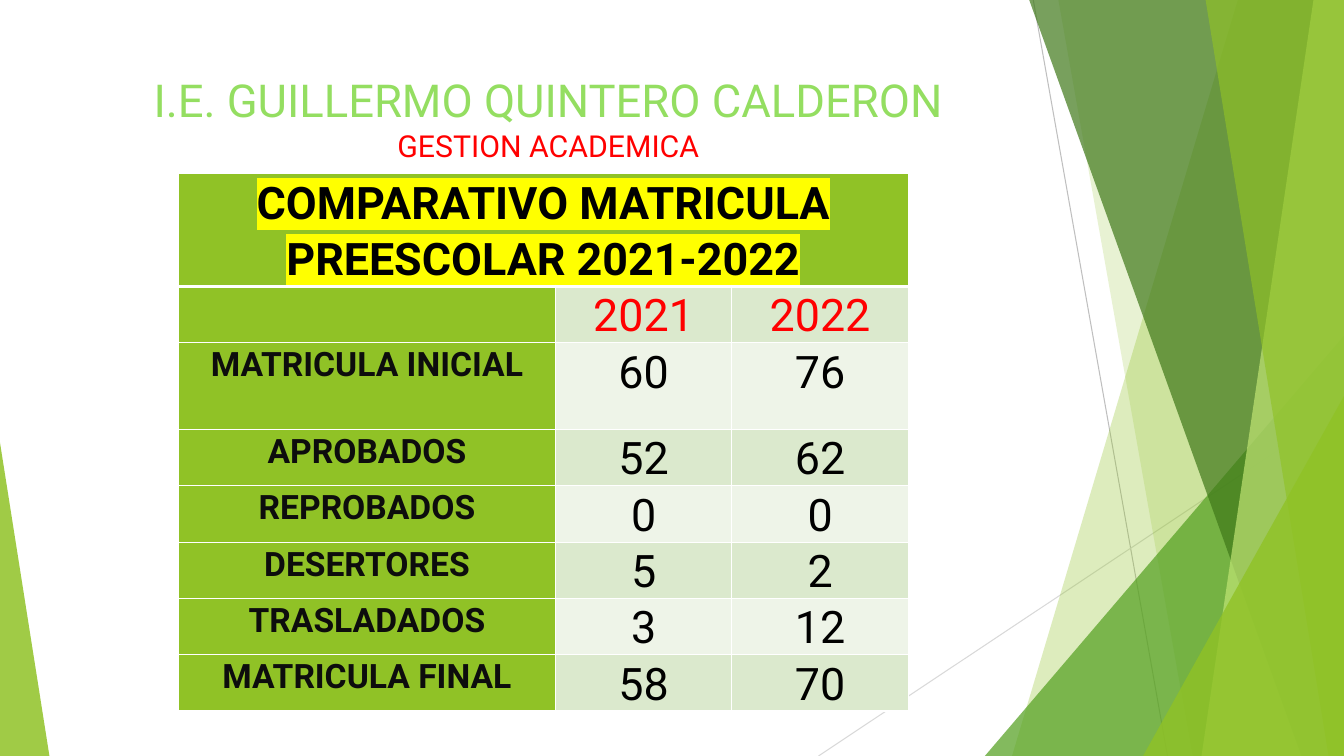
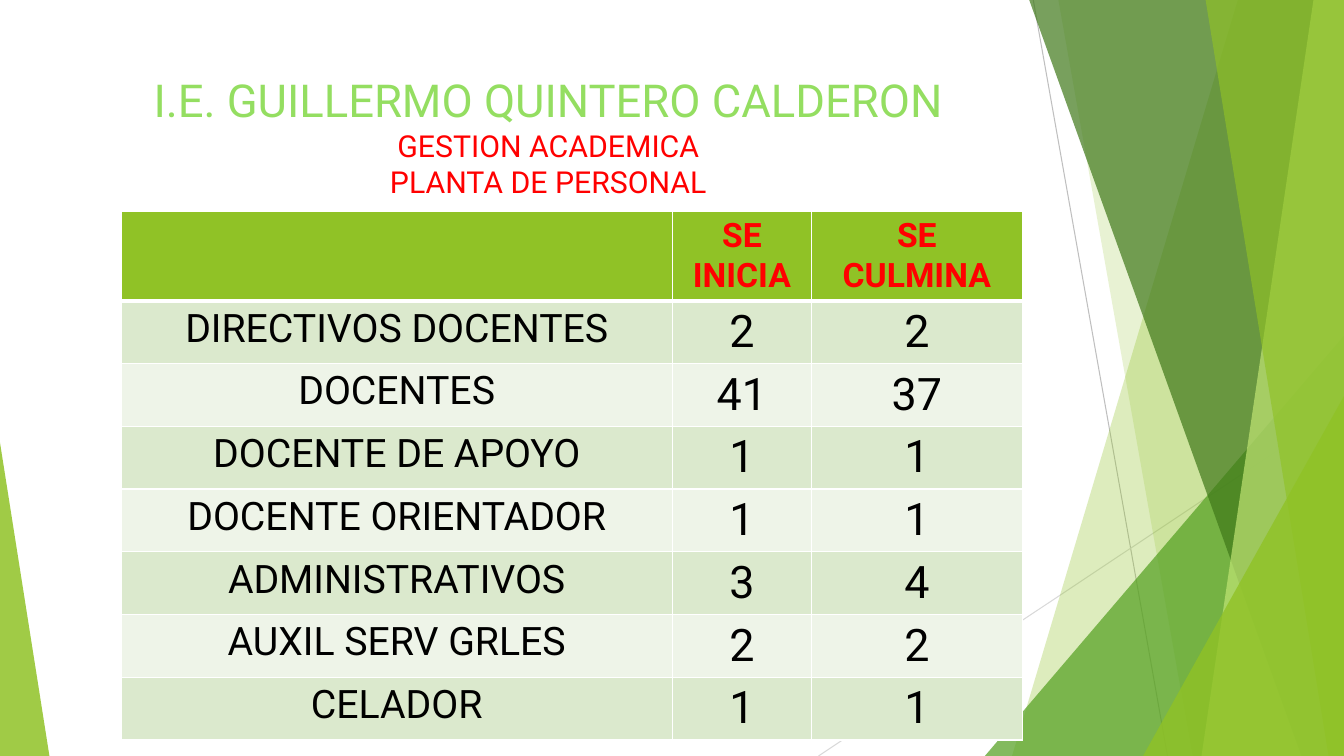
from dataclasses import dataclass

from lxml import etree
from pptx import Presentation
from pptx import util as u
from pptx.dml.color import RGBColor
from pptx.enum import shapes, text
from pptx.oxml.ns import qn


@dataclass(frozen=True)
class Theme:
    """Colours, font and type sizes."""
    font: str = "Roboto"
    green: str = "90C226"
    leaf: str = "54A021"
    dark: str = "3F7819"
    lime: str = "C0E474"
    head: str = "94DE61"
    red: str = "FF0000"
    black: str = "000000"
    ink: str = "0D0D0D"
    white: str = "FFFFFF"
    mark: str = "FFFF00"
    bands: tuple = ("DBE9CD", "EEF4E8")
    grays: tuple = ("BFBFBF", "D9D9D9")
    title: float = 32.4
    sub: float = 21.6
    big: int = 32
    mid: int = 28
    small: int = 24


@dataclass(frozen=True)
class Style:
    """Look of one run of text."""
    size: float
    color: str
    bold: bool = False
    mark: str = ""


T = Theme()
HEAD = Style(T.title, T.head)
SUB = Style(T.sub, T.red)
NUM = Style(T.big, T.black)
YEAR = Style(T.big, T.red)
NAME = Style(T.small, T.ink, True)
POST = Style(T.mid, T.black)
STAGE = Style(T.small, T.red, True)
BANNER = Style(T.big, T.black, True, T.mark)


class Deck:
    """Holds the theme and the current slide; lengths are percent of the slide."""

    def __init__(self):
        self.prs = Presentation()
        self.prs.slide_width = u.Inches(13.33)
        self.prs.slide_height = u.Inches(7.5)
        self.slide = None

    def x(self, part):
        return u.Emu(round(self.prs.slide_width * part / 100))

    def y(self, part):
        return u.Emu(round(self.prs.slide_height * part / 100))

    def box(self, left, top, width, height):
        return self.x(left), self.y(top), self.x(width), self.y(height)

    # Text
    def run(self, para, words, style):
        run = para.add_run()
        run.text = words
        font = run.font
        font.name, font.size, font.bold = T.font, u.Pt(style.size), style.bold
        font.color.rgb = RGBColor.from_string(style.color)
        if style.mark:
            fill = run._r.get_or_add_rPr().find(qn("a:solidFill"))
            mark = etree.Element(qn("a:highlight"))
            etree.SubElement(mark, qn("a:srgbClr"), val=style.mark)
            fill.addnext(mark)

    def title(self, *subs):
        shape = self.slide.shapes.title
        shape.left, shape.top, shape.width, shape.height = self.box(5.55, 8.93, 70.5, 14.13)
        frame = shape.text_frame
        frame.word_wrap = True
        frame.auto_size = text.MSO_AUTO_SIZE.NONE
        frame.vertical_anchor = text.MSO_ANCHOR.TOP
        lines = [("I.E. GUILLERMO QUINTERO CALDERON", HEAD)]
        lines += [(sub, SUB) for sub in subs]
        for i, (words, style) in enumerate(lines):
            para = frame.add_paragraph() if i else frame.paragraphs[0]
            para.alignment = text.PP_ALIGN.CENTER
            self.run(para, words, style)

    # Background parts
    def line(self, start, end, color):
        line = self.slide.shapes.add_connector(
            shapes.MSO_CONNECTOR.STRAIGHT,
            self.x(start[0]), self.y(start[1]), self.x(end[0]), self.y(end[1]))
        line.line.color.rgb = RGBColor.from_string(color)
        line.line.width = u.Pt(0.75)
        etree.SubElement(line._element.spPr, qn("a:effectLst"))

    def paint(self, shape, color, alpha):
        shape.shadow.inherit = False
        shape.line.fill.background()
        shape.fill.solid()
        shape.fill.fore_color.rgb = RGBColor.from_string(color)
        tint = shape._element.spPr.find(qn("a:solidFill"))[0]
        etree.SubElement(tint, qn("a:alpha"), val=str(alpha * 1000))

    def band(self, top, foot, color, alpha):
        """Full-height band from a slanted left edge to the right of the slide."""
        path = self.slide.shapes.build_freeform(self.x(top), 0)
        spots = [(100, 0), (100, 100), (foot, 100)]
        path.add_line_segments([(self.x(a), self.y(b)) for a, b in spots], close=True)
        self.paint(path.convert_to_shape(), color, alpha)

    def wedge(self, left, top, width, tip, color, alpha):
        """Triangle that stands on the foot of the slide."""
        shape = self.slide.shapes.add_shape(
            shapes.MSO_SHAPE.ISOSCELES_TRIANGLE, *self.box(left, top, width, 100 - top))
        shape.adjustments[0] = tip
        self.paint(shape, color, alpha)

    def page(self, *subs):
        self.slide = self.prs.slides.add_slide(self.prs.slide_layouts[5])
        self.line((76.88, 0), (86.87, 100), T.grays[0])
        self.line((100, 53.73), (60.9, 100), T.grays[1])
        self.band(92.1, 75.3, T.green, 30)
        self.band(78.75, 88.73, T.green, 20)
        self.wedge(73.28, 44.4, 26.72, 1, T.leaf, 72)
        self.band(76.58, 96.83, T.dark, 70)
        self.band(97.73, 89.4, T.lime, 70)
        self.band(89.7, 98.85, T.green, 65)
        self.wedge(85.05, 52.4, 14.95, 1, T.green, 80)
        self.wedge(0, 58.53, 3.68, 0, T.green, 85)
        self.title(*subs)

    # Table
    def edge(self, cell, row):
        props = cell._tc.get_or_add_tcPr()
        wide = {"T": 3 if row == 1 else 1, "B": 3 if row == 0 else 1}
        for i, side in enumerate("LRTB"):
            line = etree.Element(qn("a:ln" + side), w=str(u.Pt(wide.get(side, 1))))
            fill = etree.SubElement(line, qn("a:solidFill"))
            etree.SubElement(fill, qn("a:srgbClr"), val=T.white)
            props.insert(i, line)

    def table(self, left, top, cols, rows, data, look, side=False, pad=None, space=None):
        """Fill a grid; look(row, col) gives the style, side paints column one."""
        frame = self.slide.shapes.add_table(
            len(rows), len(cols), *self.box(left, top, sum(cols), sum(rows)))
        grid = frame.table
        for col, part in zip(grid.columns, cols):
            col.width = self.x(part)
        for row, part in zip(grid.rows, rows):
            row.height = self.y(part)
        for r, line in enumerate(data):
            for c, words in enumerate(line):
                cell = grid.cell(r, c)
                if pad is not None:
                    cell.margin_left = cell.margin_right = u.Inches(pad)
                    cell.margin_top = cell.margin_bottom = 0
                solid = r == 0 or (side and c == 0)
                cell.fill.solid()
                cell.fill.fore_color.rgb = RGBColor.from_string(
                    T.green if solid else T.bands[(r - 1) % 2])
                self.edge(cell, r)
                para = cell.text_frame.paragraphs[0]
                para.alignment = text.PP_ALIGN.CENTER
                if space:
                    para.line_spacing = space
                if words:
                    self.run(para, words, look(r, c))
        return grid


def main():
    deck = Deck()

    # Enrolment
    deck.page("GESTION ACADEMICA")
    data = [
        ("COMPARATIVO MATRICULA PREESCOLAR 2021-2022", "", ""),
        ("", "2021", "2022"),
        ("MATRICULA INICIAL", "60", "76"),
        ("APROBADOS", "52", "62"),
        ("REPROBADOS", "0", "0"),
        ("DESERTORES", "5", "2"),
        ("TRASLADADOS", "3", "12"),
        ("MATRICULA FINAL", "58", "70"),
    ]

    def roll(r, c):
        if r == 0:
            return BANNER
        if c == 0:
            return NAME
        return YEAR if r == 1 else NUM

    grid = deck.table(13.28, 23, (28.05, 13.13, 13.13), [14.8, 7.4, 11.5] + [7.4] * 5,
                      data, roll, side=True, pad=0.07, space=1.07)
    grid.cell(0, 0).merge(grid.cell(0, 2))

    # Staff
    deck.page("GESTION ACADEMICA", "PLANTA DE PERSONAL")
    data = [
        ("", "SE INICIA", "SE CULMINA"),
        ("DIRECTIVOS DOCENTES", "2", "2"),
        ("DOCENTES", "41", "37"),
        ("DOCENTE DE APOYO", "1", "1"),
        ("DOCENTE ORIENTADOR", "1", "1"),
        ("ADMINISTRATIVOS", "3", "4"),
        ("AUXIL SERV GRLES", "2", "2"),
        ("CELADOR", "1", "1"),
    ]

    def staff(r, c):
        if r == 0:
            return STAGE
        return NUM if c else POST

    deck.table(9, 28, (41.03, 10.35, 15.68), [11.7] + [8.3] * 7, data, staff)

    deck.prs.save("out.pptx")


if __name__ == "__main__":
    main()
